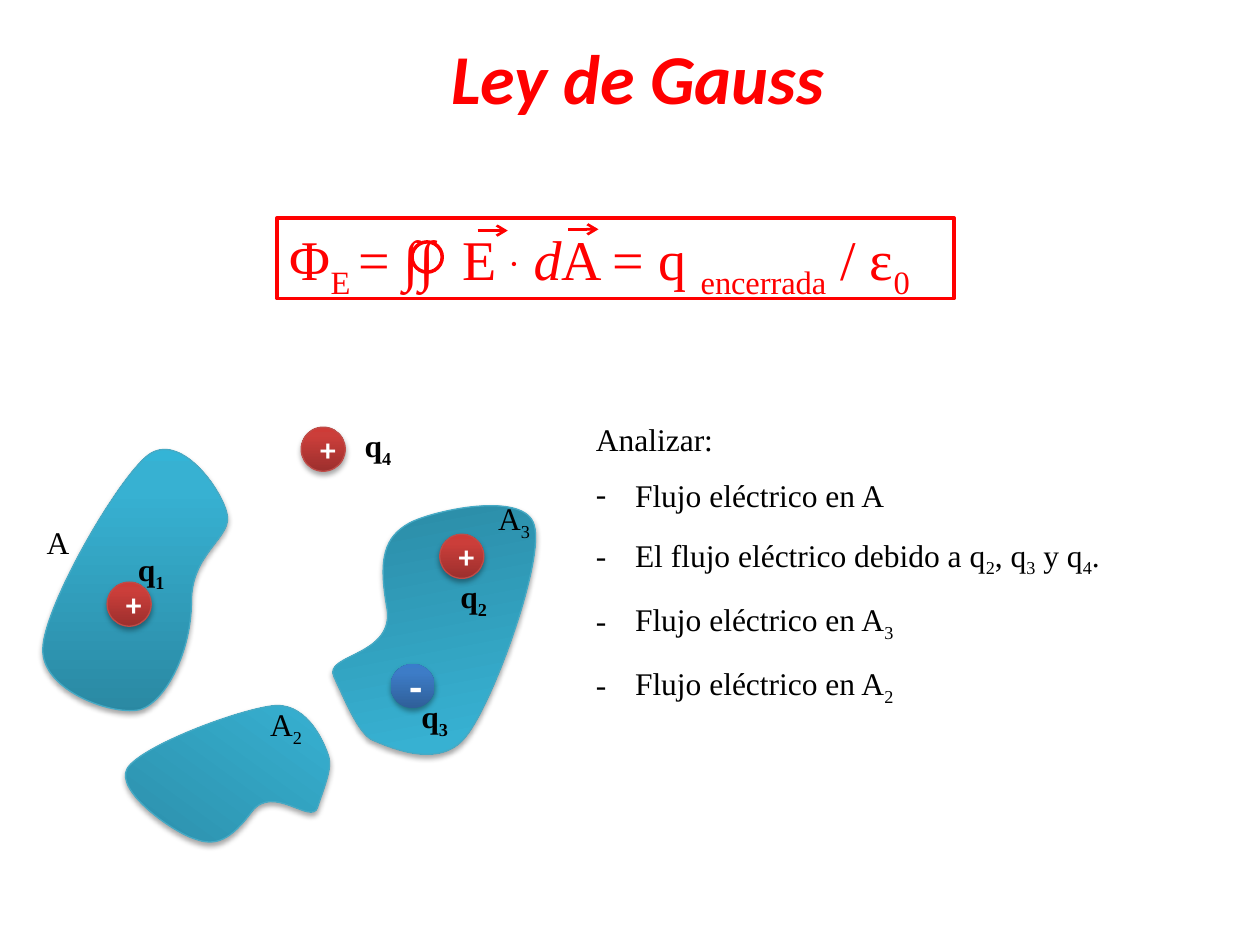
from dataclasses import dataclass
from math import cos, radians, sin

from pptx import Presentation
from pptx.dml.color import RGBColor
from pptx.enum.shapes import MSO_CONNECTOR, MSO_SHAPE
from pptx.enum.text import MSO_ANCHOR, PP_ALIGN
from pptx.oxml.ns import qn
from pptx.oxml.xmlchemy import OxmlElement
from pptx.util import Inches, Pt

OVAL, RECT, STRAIGHT = MSO_SHAPE.OVAL, MSO_SHAPE.RECTANGLE, MSO_CONNECTOR.STRAIGHT
TOP, MIDDLE = MSO_ANCHOR.TOP, MSO_ANCHOR.MIDDLE
LEFT, CENTER, JUSTIFY = PP_ALIGN.LEFT, PP_ALIGN.CENTER, PP_ALIGN.JUSTIFY


@dataclass(frozen=True)
class Theme:
    accent: str = "FF0000"
    ink: str = "000000"
    light: str = "FFFFFF"
    surface: tuple = ("2A88A2", "37B1D2", "34B4D6")
    surface_edge: str = "46AAC5"
    positive: tuple = ("9C2F2D", "CB3E3A", "CE3B37")
    positive_edge: str = "BF4C48"
    negative: tuple = ("2F5F99", "3D7CC7", "3A7CCB")
    heading_font: str = "Calibri"
    text_font: str = "Times New Roman"
    title: int = 40
    formula: int = 32
    minus: int = 24
    body: int = 18


THEME = Theme()
SUB, SUPER = -25, 30

# Content: text between underscores is a subscript
TITLE = "Ley de Gauss"
FORMULA = [  # text, baseline %, size, italic
    ("Φ", 0, THEME.formula, False), ("E ", SUB, THEME.formula, False),
    ("= ∫∫  E ", 0, THEME.formula, False), ("•", SUPER, THEME.body, False),
    ("  ", SUB, THEME.formula, False), ("d", 0, THEME.formula, True),
    ("A = q ", 0, THEME.formula, False), ("encerrada", SUB, THEME.formula, False),
    (" / ε", 0, THEME.formula, False), ("0", SUB, THEME.formula, False),
]
VECTOR_ARROWS = [(3.79, 1.83), (4.51, 1.82)]
TASKS = [
    "Analizar:",
    "Flujo eléctrico en A",
    "El flujo eléctrico debido a q_2_, q_3_ y q_4_.",
    "Flujo eléctrico en A_3_",
    "Flujo eléctrico en A_2_",
]
# Closed surfaces: rotation, start point, then Bézier points in threes
SURFACES = [
    (169.2, [(4.24, 4.17), (4.32, 4.45), (3.92, 5.56), (3.7, 5.84),
             (3.49, 6.12), (3.07, 5.92), (2.95, 5.87),
             (2.84, 5.81), (2.74, 5.56), (2.65, 5.37),
             (2.56, 5.19), (3.14, 5.21), (3.07, 4.82),
             (3, 4.43), (3.05, 4.26), (3.25, 4.15),
             (3.44, 4.05), (4.17, 3.89), (4.24, 4.17)]),
    (0, [(0.34, 5.15), (0.35, 4.81), (0.94, 3.79), (1.18, 3.61),
         (1.43, 3.43), (1.75, 3.87), (1.8, 4.07),
         (1.86, 4.26), (1.52, 4.38), (1.52, 4.77),
         (1.52, 5.17), (1.32, 5.56), (1.12, 5.63),
         (0.92, 5.69), (0.33, 5.49), (0.34, 5.15)]),
    (35.9, [(1.01, 6.1), (1.12, 5.92), (1.92, 5.62), (2.19, 5.6),
            (2.45, 5.59), (2.58, 5.91), (2.61, 6.01),
            (2.64, 6.1), (2.56, 6.28), (2.52, 6.41),
            (2.47, 6.55), (2.17, 6.22), (2, 6.44),
            (1.83, 6.67), (1.71, 6.72), (1.55, 6.66),
            (1.38, 6.61), (0.91, 6.28), (1.01, 6.1)]),
]
CHARGES = [("+", 0.85, 4.62), ("+", 3.49, 4.24), ("-", 3.1, 5.27), ("+", 2.39, 3.39)]
LABELS = [  # text, bold, left, top
    ("A", False, 0.2, 4.1), ("A_2_", False, 2.01, 5.55), ("A_3_", False, 3.82, 3.91),
    ("q_1_", True, 0.94, 4.32), ("q_4_", True, 2.74, 3.33),
    ("q_2_", True, 3.5, 4.53), ("q_3_", True, 3.19, 5.48),
]


def box(*lengths):
    return [Inches(length) for length in lengths]


def place(shape, *lengths):
    shape.left, shape.top, shape.width, shape.height = box(*lengths)


def add_xml(parent, tag, **attributes):
    child = OxmlElement(tag)
    for key, value in attributes.items():
        child.set(key, str(value))
    parent.append(child)
    return child


def subscripted(text, size=THEME.body):
    return [(piece, SUB if i % 2 else 0, size, False)
            for i, piece in enumerate(text.split("_")) if piece]


def write(paragraph, pieces, color, font=THEME.text_font, bold=False, align=CENTER):
    paragraph.alignment = align
    for text, baseline, size, italic in pieces:
        run = paragraph.add_run()
        run.text = text
        run.font.name, run.font.size = font, Pt(size)
        run.font.bold, run.font.italic = bold, italic
        run.font.color.rgb = RGBColor.from_string(color)
        if baseline:
            run.font._element.set("baseline", str(baseline * 1000))


def outline(shape, color, width):
    shape.line.color.rgb = RGBColor.from_string(color)
    shape.line.width = Pt(width)


def shade(shape, colors, edge):
    """Vertical gradient, thin edge and soft shadow below."""
    shape.fill.gradient()
    shape.fill.gradient_angle = 90
    stops = next(shape._element.iter(qn("a:gsLst")))
    for stop in list(stops):
        stops.remove(stop)
    for position, color in zip((0, 80, 100), colors):
        add_xml(add_xml(stops, "a:gs", pos=position * 1000), "a:srgbClr", val=color)
    if edge:
        outline(shape, edge, 0.75)
    else:
        shape.line.fill.background()
    shape.shadow.inherit = False
    shadow = add_xml(next(shape._element.iter(qn("a:effectLst"))), "a:outerShdw",
                     blurRad=Pt(3.1), dist=Pt(1.8), dir=90 * 60000, rotWithShape=0)
    add_xml(add_xml(shadow, "a:srgbClr", val=THEME.ink), "a:alpha", val=35000)


def add_surface(shapes, rotation, points):
    # Unrotate about the origin, then put the turned centre back in place
    turn = complex(cos(radians(rotation)), sin(radians(rotation)))
    flat = [complex(*point) / turn for point in points]
    start, *rest = [box(p.real, p.imag) for p in flat]
    builder = shapes.build_freeform(*start)
    builder.add_line_segments(rest, close=True)
    shape = builder.convert_to_shape()
    center = turn * complex(shape.left + shape.width / 2, shape.top + shape.height / 2)
    shape.left = int(center.real - shape.width / 2)
    shape.top = int(center.imag - shape.height / 2)
    shape.rotation = rotation
    # Each three points become one curve
    segments = list(shape._element.iter(qn("a:lnTo")))
    for i in range(0, len(segments), 3):
        curve = OxmlElement("a:cubicBezTo")
        segments[i].addprevious(curve)
        for segment in segments[i:i + 3]:
            curve.append(segment[0])
            segment.getparent().remove(segment)
    shade(shape, THEME.surface, THEME.surface_edge)


def add_formula(shapes):
    frame = shapes.add_shape(RECT, *box(2.2, 1.73, 5.37, 0.64))
    ring = shapes.add_shape(OVAL, *box(3.27, 1.92, 0.24, 0.24))
    for shape, width in ((frame, 2.25), (ring, 2)):
        shape.fill.background()
        shape.shadow.inherit = False
        outline(shape, THEME.accent, width)
    frame.text_frame.vertical_anchor = TOP
    frame.text_frame.word_wrap = True
    write(frame.text_frame.paragraphs[0], FORMULA, THEME.accent, align=LEFT)
    for x, y in VECTOR_ARROWS:
        arrow = shapes.add_connector(STRAIGHT, *box(x, y, x + 0.24, y))
        outline(arrow, THEME.accent, 1.5)
        add_xml(arrow.line._get_or_add_ln(), "a:tailEnd", type="arrow")
        add_xml(arrow._element.spPr, "a:effectLst")


def add_charge(shapes, sign, x, y):
    charge = shapes.add_shape(OVAL, *box(x, y, 0.35, 0.35))
    if sign == "+":
        colors, edge, size = THEME.positive, THEME.positive_edge, THEME.body
    else:
        colors, edge, size = THEME.negative, None, THEME.minus
    shade(charge, colors, edge)
    charge.text_frame.vertical_anchor = MIDDLE
    write(charge.text_frame.paragraphs[0], subscripted(sign, size), THEME.light,
          THEME.heading_font, bold=True)


def add_tasks(body):
    place(body, 4.63, 3.13, 5.37, 2.37)
    frame = body.text_frame
    for i, task in enumerate(TASKS):
        paragraph = frame.add_paragraph() if i else frame.paragraphs[0]
        write(paragraph, subscripted(task), THEME.ink, align=JUSTIFY)
        paragraph.line_spacing, paragraph.space_before = 1.5, Pt(0)
        indent = Inches(0.31) if i else 0
        props = paragraph._p.get_or_add_pPr()
        props.set("marL", str(indent))
        props.set("indent", str(-indent))
        if i:
            add_xml(props, "a:buFont", typeface=THEME.text_font)
            add_xml(props, "a:buChar", char="-")
        else:
            add_xml(props, "a:buNone")


def main():
    deck = Presentation()
    deck.slide_width, deck.slide_height = box(10, 7.5)
    slide = deck.slides.add_slide(deck.slide_layouts[1])
    title, body = slide.placeholders
    shapes = slide.shapes

    # Title and task list
    place(title, 0.08, 0.22, 9.96, 0.77)
    title.text_frame.vertical_anchor = TOP
    write(title.text_frame.paragraphs[0], [(TITLE, 0, THEME.title, True)],
          THEME.accent, THEME.heading_font, bold=True)
    add_tasks(body)

    # Gauss's law, then surfaces, charges and their labels
    add_formula(shapes.add_group_shape().shapes)
    for rotation, points in SURFACES:
        add_surface(shapes, rotation, points)
    for sign, x, y in CHARGES:
        add_charge(shapes, sign, x, y)
    for text, bold, x, y in LABELS:
        label = shapes.add_textbox(*box(x, y, 0.52, 0.4)).text_frame
        label.word_wrap = True
        write(label.paragraphs[0], subscripted(text), THEME.ink, bold=bold)

    deck.save("out.pptx")


if __name__ == "__main__":
    main()
